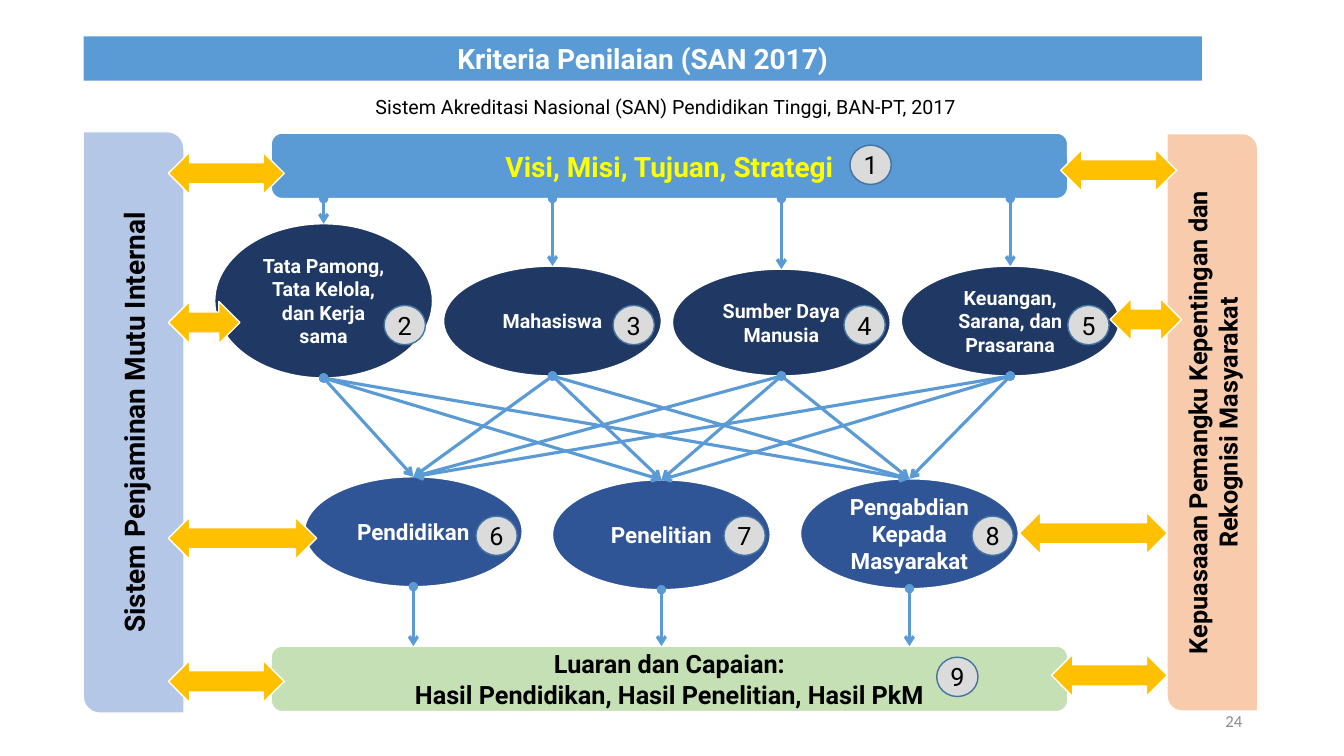
"""Build the slide on the SAN 2017 assessment criteria."""
from lxml import etree
from pptx import Presentation
from pptx.dml.color import RGBColor
from pptx.enum.shapes import MSO_CONNECTOR, MSO_SHAPE
from pptx.enum.text import MSO_ANCHOR, MSO_AUTO_SIZE, PP_ALIGN
from pptx.oxml.ns import qn
from pptx.util import Inches, Pt

BLUE = RGBColor(0x5B, 0x9B, 0xD5)
NAVY = RGBColor(0x20, 0x38, 0x64)
ROYAL = RGBColor(0x2F, 0x55, 0x97)
PALE_BLUE = RGBColor(0xB4, 0xC7, 0xE7)
PEACH = RGBColor(0xF8, 0xCB, 0xAD)
GREEN = RGBColor(0xC5, 0xE0, 0xB4)
GOLD = RGBColor(0xFF, 0xC0, 0x00)
YELLOW = RGBColor(0xFF, 0xFF, 0x00)
GREY = RGBColor(0xDB, 0xDB, 0xDB)
BADGE_LINE = RGBColor(0x43, 0x73, 0x9E)
NUMBER_GREY = RGBColor(0x8C, 0x8C, 0x8C)
WHITE = RGBColor(0xFF, 0xFF, 0xFF)
BLACK = RGBColor(0, 0, 0)

OVAL_W = 2.16
BADGE_W, BADGE_H = 0.41, 0.39
ARROW_H = 0.42
SIDE_ARROW_X = 1.67

INPUTS = [
    ("Tata Pamong, Tata Kelola, dan Kerja sama", 2.22, 1.53),
    ("Mahasiswa", 2.64, 1.09),
    ("Sumber Daya Manusia", 2.67, 1.06),
    ("Keuangan, Sarana, dan Prasarana", 2.64, 1.09),
]
PROCESSES = [
    ("Pendidikan", 4.73),
    ("Penelitian", 4.76),
    ("Pengabdian Kepada Masyarakat", 4.75),
]
BADGES = [(8.43, 1.44), (3.81, 3.03), (6.08, 3.03), (8.37, 3.03), (10.59, 3.03),
          (4.72, 5.12), (7.18, 5.12), (9.64, 5.12), (9.29, 6.52)]
LEFT_ARROWS = [(2.99, 0.71), (1.51, 1.15), (5.13, 1.47), (6.55, 1.15)]
RIGHT_ARROWS = [(11.01, 2.96, 0.71), (10.52, 1.48, 1.15),
                (10.11, 5.08, 1.47), (10.43, 6.49, 1.15)]


def set_text(sp, text, size=18, color=BLACK, bold=False, font="Roboto",
             align=PP_ALIGN.CENTER, anchor=MSO_ANCHOR.MIDDLE):
    tf = sp.text_frame
    tf.word_wrap = True
    tf.auto_size = MSO_AUTO_SIZE.NONE
    tf.vertical_anchor = anchor
    for i, line in enumerate(text.split("\n")):
        p = tf.paragraphs[0] if i == 0 else tf.add_paragraph()
        p.alignment = align
        r = p.add_run()
        r.text = line
        r.font.name = font
        r.font.size = Pt(size)
        r.font.bold = bold
        r.font.color.rgb = color


def add_title(slide, text, left, top, width, height):
    sp = slide.shapes.title
    sp.left, sp.top = Inches(left), Inches(top)
    sp.width, sp.height = Inches(width), Inches(height)
    sp.fill.solid()
    sp.fill.fore_color.rgb = BLUE
    set_text(sp, text, size=20, color=WHITE, bold=True, anchor=MSO_ANCHOR.TOP)


def add_label(slide, text, left, top, width, height, **text_format):
    sp = slide.shapes.add_textbox(Inches(left), Inches(top), Inches(width), Inches(height))
    set_text(sp, text, **text_format)


def add_box(slide, kind, left, top, width, height, fill, line=WHITE):
    sp = slide.shapes.add_shape(kind, Inches(left), Inches(top), Inches(width), Inches(height))
    sp.shadow.inherit = False
    sp.fill.solid()
    sp.fill.fore_color.rgb = fill
    sp.line.color.rgb = line
    sp.line.width = Pt(1)
    return sp


def add_text_box(slide, kind, text, left, top, width, height, fill, rotation=0, **text_format):
    sp = add_box(slide, kind, left, top, width, height, fill)
    sp.rotation = rotation
    set_text(sp, text, bold=True, **text_format)
    return sp


def add_badge(slide, number, left, top):
    sp = add_box(slide, MSO_SHAPE.OVAL, left, top, BADGE_W, BADGE_H, GREY, BADGE_LINE)
    tf = sp.text_frame
    tf.margin_left = tf.margin_right = tf.margin_top = tf.margin_bottom = 0
    set_text(sp, str(number))


def add_arrow(slide, x1, y1, x2, y2):
    cxn = slide.shapes.add_connector(MSO_CONNECTOR.STRAIGHT, x1, y1, x2, y2)
    cxn.line.color.rgb = BLUE
    cxn.line.width = Pt(2.25)
    ln = cxn.line._get_or_add_ln()
    etree.SubElement(ln, qn("a:headEnd"), type="oval")
    etree.SubElement(ln, qn("a:tailEnd"), type="arrow")
    etree.SubElement(cxn._element.spPr, qn("a:effectLst"))
    return cxn


def center_x(sp):
    return sp.left + sp.width // 2


def bottom(sp):
    return sp.top + sp.height


def connect_to_top(slide, x, y, target):
    cxn = add_arrow(slide, x, y, center_x(target), target.top)
    cxn.end_connect(target, 0)


def main():
    prs = Presentation()
    prs.slide_width, prs.slide_height = Inches(13.33), Inches(7.5)
    slide = prs.slides.add_slide(prs.slide_layouts[5])

    add_title(slide, "Kriteria Penilaian (SAN 2017)", 0.83, 0.36, 11.09, 0.44)
    add_label(slide, "24", 9.42, 6.95, 3, 0.4, size=12, color=NUMBER_GREY,
              font="Calibri", align=PP_ALIGN.RIGHT)
    add_label(slide, "Sistem Akreditasi Nasional (SAN) Pendidikan Tinggi, BAN-PT, 2017",
              2.69, 0.89, 7.83, 0.34, size=14, anchor=MSO_ANCHOR.TOP)

    vision = add_text_box(slide, MSO_SHAPE.ROUNDED_RECTANGLE, "Visi, Misi, Tujuan, Strategi",
                          2.69, 1.32, 7.9, 0.65, BLUE, size=20, color=YELLOW)
    inputs = [add_text_box(slide, MSO_SHAPE.OVAL, text, 2.13 + 2.27 * i, top, OVAL_W, height,
                           NAVY, size=14, color=WHITE)
              for i, (text, top, height) in enumerate(INPUTS)]
    processes = [add_text_box(slide, MSO_SHAPE.OVAL, text, 3.02 + 2.46 * i, top, OVAL_W, 1.09,
                              ROYAL, size=16, color=WHITE)
                 for i, (text, top) in enumerate(PROCESSES)]
    outcome = add_text_box(slide, MSO_SHAPE.ROUNDED_RECTANGLE,
                           "Luaran dan Capaian:\nHasil Pendidikan, Hasil Penelitian, Hasil PkM",
                           2.69, 6.41, 7.9, 0.65, GREEN)
    add_text_box(slide, MSO_SHAPE.ROUND_2_DIAG_RECTANGLE, "Sistem Penjaminan Mutu Internal",
                 -1.56, 3.69, 5.77, 1, PALE_BLUE, rotation=270, size=20)
    add_text_box(slide, MSO_SHAPE.ROUND_2_DIAG_RECTANGLE,
                 "Kepuasaaan Pemangku Kepentingan dan Rekognisi Masyarakat",
                 9.16, 3.74, 5.73, 0.9, PEACH, rotation=270)

    for number, (left, top) in enumerate(BADGES, start=1):
        add_badge(slide, number, left, top)

    for source in inputs:
        connect_to_top(slide, center_x(source), bottom(vision), source)
        for process in processes:
            connect_to_top(slide, center_x(source), bottom(source), process)
    for process in processes:
        add_arrow(slide, center_x(process), bottom(process), center_x(process), outcome.top)

    side_arrows = [(SIDE_ARROW_X, top, width) for top, width in LEFT_ARROWS] + RIGHT_ARROWS
    for left, top, width in side_arrows:
        add_box(slide, MSO_SHAPE.LEFT_RIGHT_ARROW, left, top, width, ARROW_H, GOLD)

    prs.save("out.pptx")


if __name__ == "__main__":
    main()
